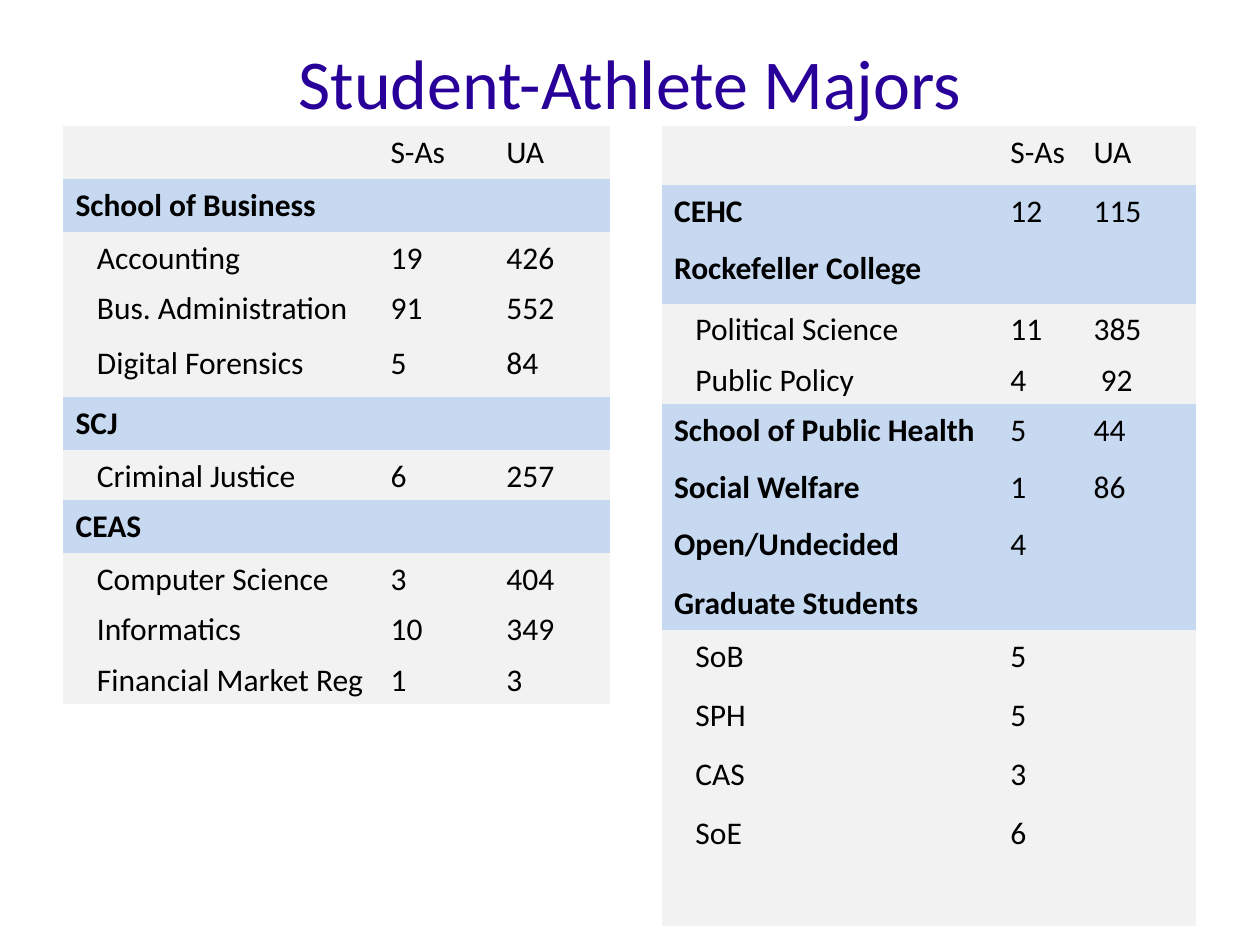
from pptx import Presentation
from pptx.dml.color import RGBColor
from pptx.enum.text import MSO_ANCHOR, PP_ALIGN
from pptx.oxml.ns import qn
from pptx.util import Inches, Pt

FONT = "Calibri"
COLORS = {"title": "280099", "text": "000000", "school": "C6D9F1", "major": "F2F2F2"}
PLAIN_TABLE_STYLE = "{2D5ABB26-0587-4C30-8999-92F81FD0307C}"
CELL_MARGIN = 0.1
MAJOR_INDENT = 0.17

# Each row: kind, height, name, student-athletes, university total
LEFT_ROWS = [
    ("header", 0.42, "", "S-As", "UA"),
    ("school", 0.42, "School of Business", "", ""),
    ("major", 0.4, "Accounting", "19", "426"),
    ("major", 0.44, "Bus. Administration", "91", "552"),
    ("major", 0.47, "Digital Forensics", "5", "84"),
    ("school", 0.42, "SCJ", "", ""),
    ("major", 0.4, "Criminal Justice", "6", "257"),
    ("school", 0.42, "CEAS", "", ""),
    ("major", 0.4, "Computer Science", "3", "404"),
    ("major", 0.4, "Informatics", "10", "349"),
    ("major", 0.4, "Financial Market Reg", "1", "3"),
]
RIGHT_ROWS = [
    ("header", 0.47, "", "S-As", "UA"),
    ("school", 0.45, "CEHC", "12", "115"),
    ("school", 0.49, "Rockefeller College", "", ""),
    ("major", 0.4, "Political Science", "11", "385"),
    ("major", 0.4, "Public Policy", "4", " 92"),
    ("school", 0.45, "School of Public Health", "5", "44"),
    ("school", 0.45, "Social Welfare", "1", "86"),
    ("school", 0.47, "Open/Undecided", "4", ""),
    ("school", 0.42, "Graduate Students", "", ""),
    ("major", 0.47, "SoB", "5", ""),
    ("major", 0.47, "SPH", "5", ""),
    ("major", 0.47, "CAS", "3", ""),
    ("major", 0.47, "SoE", "6", ""),
    ("major", 0.47, "", "", ""),
]


def format_runs(paragraph, size, color, bold=False):
    for run in paragraph.runs:
        run.font.name = FONT
        run.font.size = Pt(size)
        run.font.bold = bold
        run.font.color.rgb = RGBColor.from_string(COLORS[color])


def add_title(slide, text):
    shape = slide.shapes.add_textbox(Inches(0.5), Inches(0.3), Inches(9), Inches(0.7))
    frame = shape.text_frame
    frame.word_wrap = True
    frame.vertical_anchor = MSO_ANCHOR.MIDDLE
    frame.margin_left = frame.margin_right = frame.margin_top = frame.margin_bottom = 0
    frame.text = text
    paragraph = frame.paragraphs[0]
    paragraph.alignment = PP_ALIGN.CENTER
    format_runs(paragraph, 40, "title")


def fill_cell(cell, text, color, bold, indent):
    cell.fill.solid()
    cell.fill.fore_color.rgb = RGBColor.from_string(COLORS[color])
    if not text:
        return
    cell.margin_left = Inches(CELL_MARGIN + indent)
    cell.margin_right = Inches(CELL_MARGIN)
    cell.margin_top = Inches(0.07)
    cell.margin_bottom = Inches(0.05)
    cell.text_frame.text = text
    paragraph = cell.text_frame.paragraphs[0]
    paragraph.line_spacing = 0.93
    format_runs(paragraph, 18, "text", bold)


def add_majors_table(slide, left, widths, rows):
    height = sum(row[1] for row in rows)
    shape = slide.shapes.add_table(len(rows), len(widths), Inches(left), Inches(1),
                                   Inches(sum(widths)), Inches(height))
    shape.element.find(".//" + qn("a:tableStyleId")).text = PLAIN_TABLE_STYLE
    table = shape.table
    table.first_row = table.horz_banding = False
    for column, width in zip(table.columns, widths):
        column.width = Inches(width)
    for row, (kind, row_height, *texts) in zip(table.rows, rows):
        row.height = Inches(row_height)
        color = "school" if kind == "school" else "major"
        for index, (cell, text) in enumerate(zip(row.cells, texts)):
            is_name = index == 0
            indent = MAJOR_INDENT if is_name and kind == "major" else 0
            fill_cell(cell, text, color, is_name and kind == "school", indent)


def main():
    presentation = Presentation()
    presentation.slide_width = Inches(10)
    presentation.slide_height = Inches(7.5)
    slide = presentation.slides.add_slide(presentation.slide_layouts[6])
    add_title(slide, "Student-Athlete Majors")
    add_majors_table(slide, 0.5, (2.5, 0.92, 0.92), LEFT_ROWS)
    add_majors_table(slide, 5.25, (2.67, 0.66, 0.91), RIGHT_ROWS)
    presentation.save("out.pptx")


if __name__ == "__main__":
    main()
